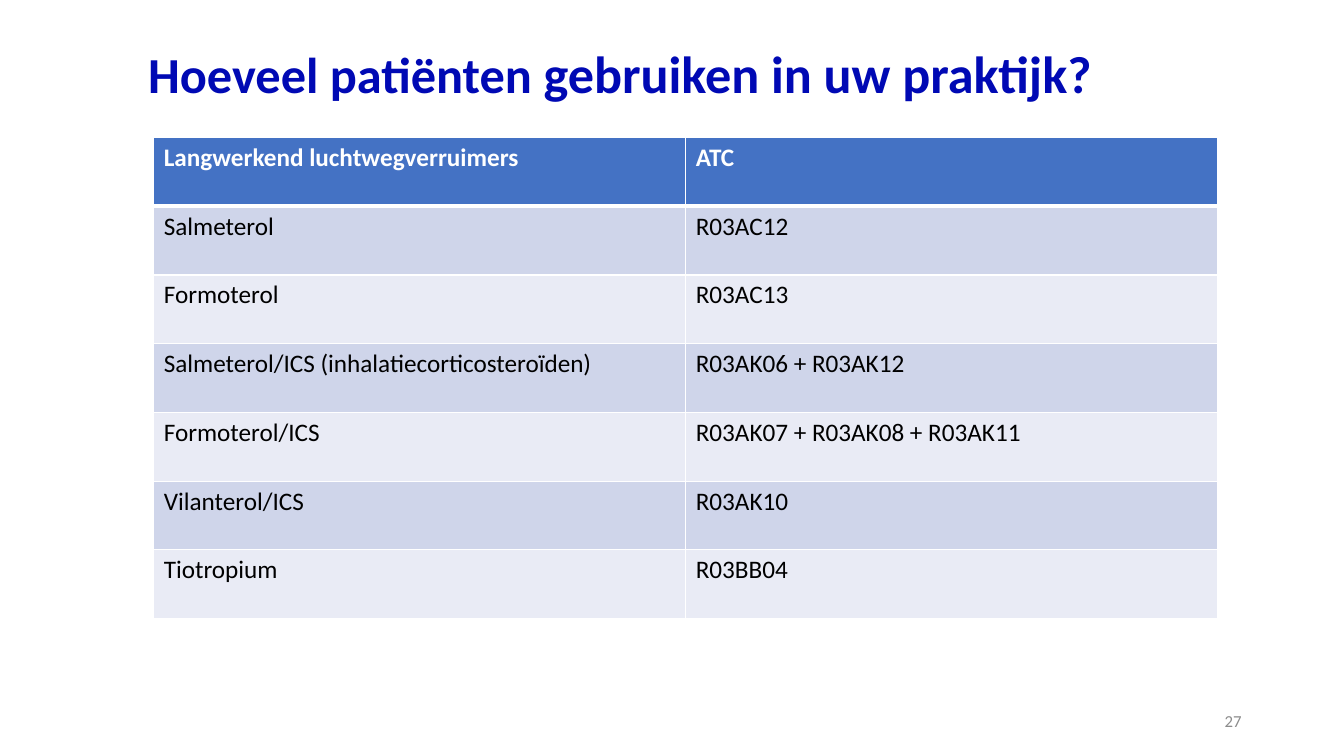
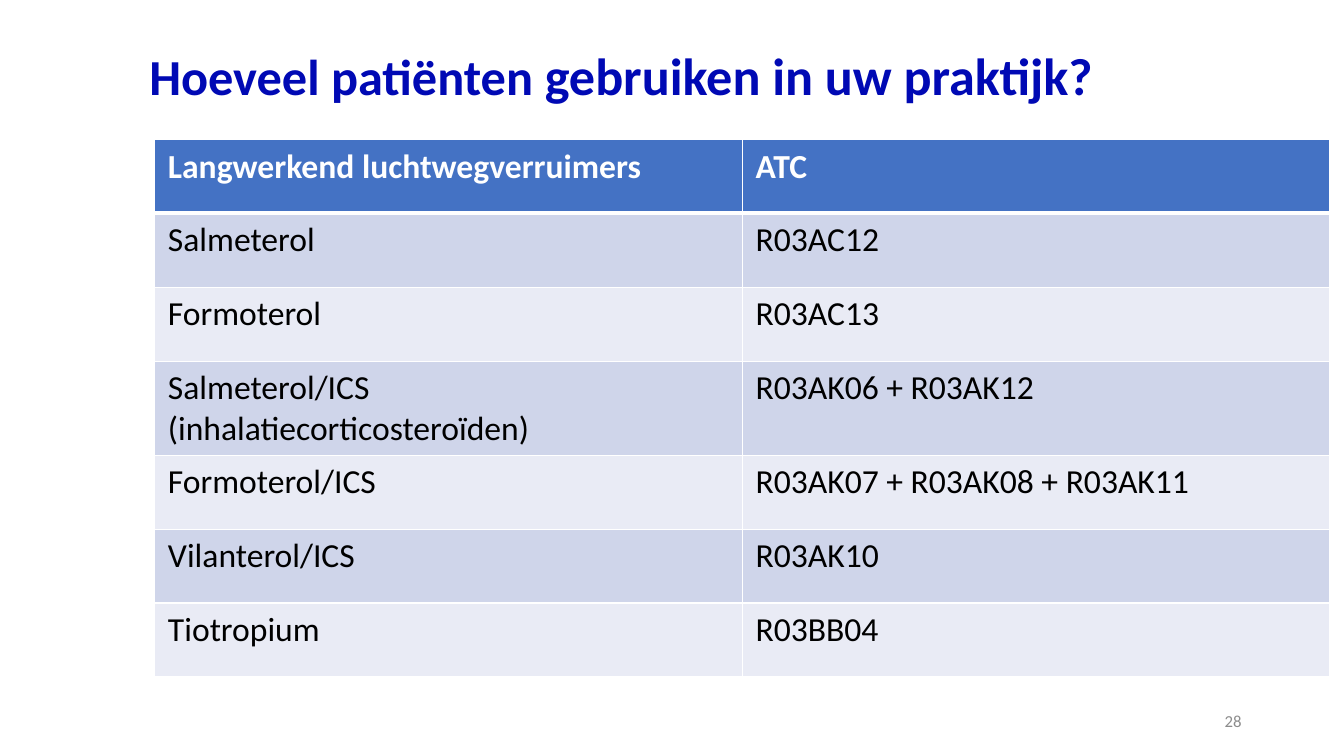
from dataclasses import dataclass

from lxml import etree
from pptx import Presentation
from pptx.dml.color import RGBColor
from pptx.enum import text
from pptx.oxml import ns
from pptx.util import Pt


@dataclass(frozen=True)
class Theme:
    font: str = "Calibri"
    title: str = "0009B4"
    header: str = "4472C4"
    bands: tuple = ("CFD5EA", "E9EBF5")
    white: str = "FFFFFF"
    ink: str = "000000"
    grey: str = "8C8C8C"
    title_sizes: tuple = (36, 37.3)
    number_size: int = 12
    rule: int = 1
    header_rule: int = 3


T = Theme()
TITLE = ("Hoeveel patiënten ", "gebruiken in uw praktijk?")
ROWS = [
    ("Langwerkend luchtwegverruimers", "ATC"),
    ("Salmeterol", "R03AC12"),
    ("Formoterol", "R03AC13"),
    ("Salmeterol/ICS (inhalatiecorticosteroïden)", "R03AK06 + R03AK12"),
    ("Formoterol/ICS", "R03AK07 + R03AK08 + R03AK11"),
    ("Vilanterol/ICS", "R03AK10"),
    ("Tiotropium", "R03BB04"),
]
NUMBER_BOX = (678, 500.4, 216, 28.8)

# Per slide: number, title box, table box, row height, text size, cell margins (x, y)
SLIDES = [
    ("27", (98.6, 16.6, 816, 75.6), (109.8, 98.2, 760, 343.7), 49.1, 18, (7.2, 3.6)),
    ("28", (99.4, 18, 816, 75.6), (110.4, 99.6, 839.6, 369.6), 52.8, 24, (9.6, 4.8)),
]


def put(obj, **values):
    for name, value in values.items():
        setattr(obj, name, value)


def place(sp, box):
    put(sp, **dict(zip(("left", "top", "width", "height"), map(Pt, box))))


def add_run(p, words, size, color, bold=False):
    r = p.add_run()
    r.text = words
    put(r.font, name=T.font, size=Pt(size), bold=bold)
    r.font.color.rgb = RGBColor.from_string(color)


def add_title(s, box):
    sp = s.shapes.title
    place(sp, box)
    tf = sp.text_frame
    put(tf, word_wrap=True, auto_size=text.MSO_AUTO_SIZE.NONE,
        vertical_anchor=text.MSO_ANCHOR.MIDDLE)
    p = tf.paragraphs[0]
    put(p, alignment=text.PP_ALIGN.LEFT, line_spacing=0.9)
    for words, size in zip(TITLE, T.title_sizes):
        add_run(p, words, size, T.title, bold=True)


def add_number(s, box, number):
    tf = s.shapes.add_textbox(*map(Pt, box)).text_frame
    put(tf, word_wrap=True, vertical_anchor=text.MSO_ANCHOR.MIDDLE)
    p = tf.paragraphs[0]
    p.alignment = text.PP_ALIGN.RIGHT
    add_run(p, number, T.number_size, T.grey)


def add_borders(cell, row):
    """Thin white rules, with a thick one under the header row."""
    tcPr = cell._tc.get_or_add_tcPr()
    thick = {("lnB", 0), ("lnT", 1)}
    for side in ("lnL", "lnR", "lnT", "lnB"):
        width = T.header_rule if (side, row) in thick else T.rule
        ln = etree.SubElement(tcPr, ns.qn(f"a:{side}"), w=str(Pt(width)))
        fill = etree.SubElement(ln, ns.qn("a:solidFill"))
        etree.SubElement(fill, ns.qn("a:srgbClr"), val=T.white)


def add_drug_table(s, box, row_height, size, margins):
    table = s.shapes.add_table(len(ROWS), len(ROWS[0]), *map(Pt, box)).table
    mx, my = map(Pt, margins)
    for i, row in enumerate(ROWS):
        table.rows[i].height = Pt(row_height)
        head = i == 0
        color = T.header if head else T.bands[(i - 1) % 2]
        for j, words in enumerate(row):
            cell = table.cell(i, j)
            put(cell, margin_left=mx, margin_right=mx, margin_top=my, margin_bottom=my)
            add_borders(cell, i)
            cell.fill.solid()
            cell.fill.fore_color.rgb = RGBColor.from_string(color)
            add_run(cell.text_frame.paragraphs[0], words, size,
                    T.white if head else T.ink, bold=head)


def add_table_slide(prs, number, title_box, table_box, row_height, size, margins):
    s = prs.slides.add_slide(prs.slide_layouts.get_by_name("Title Only"))
    add_title(s, title_box)
    add_number(s, NUMBER_BOX, number)
    add_drug_table(s, table_box, row_height, size, margins)


def main():
    prs = Presentation()
    put(prs, slide_width=Pt(960), slide_height=Pt(540))
    for spec_row in SLIDES:
        add_table_slide(prs, *spec_row)
    prs.save("out.pptx")


if __name__ == "__main__":
    main()
